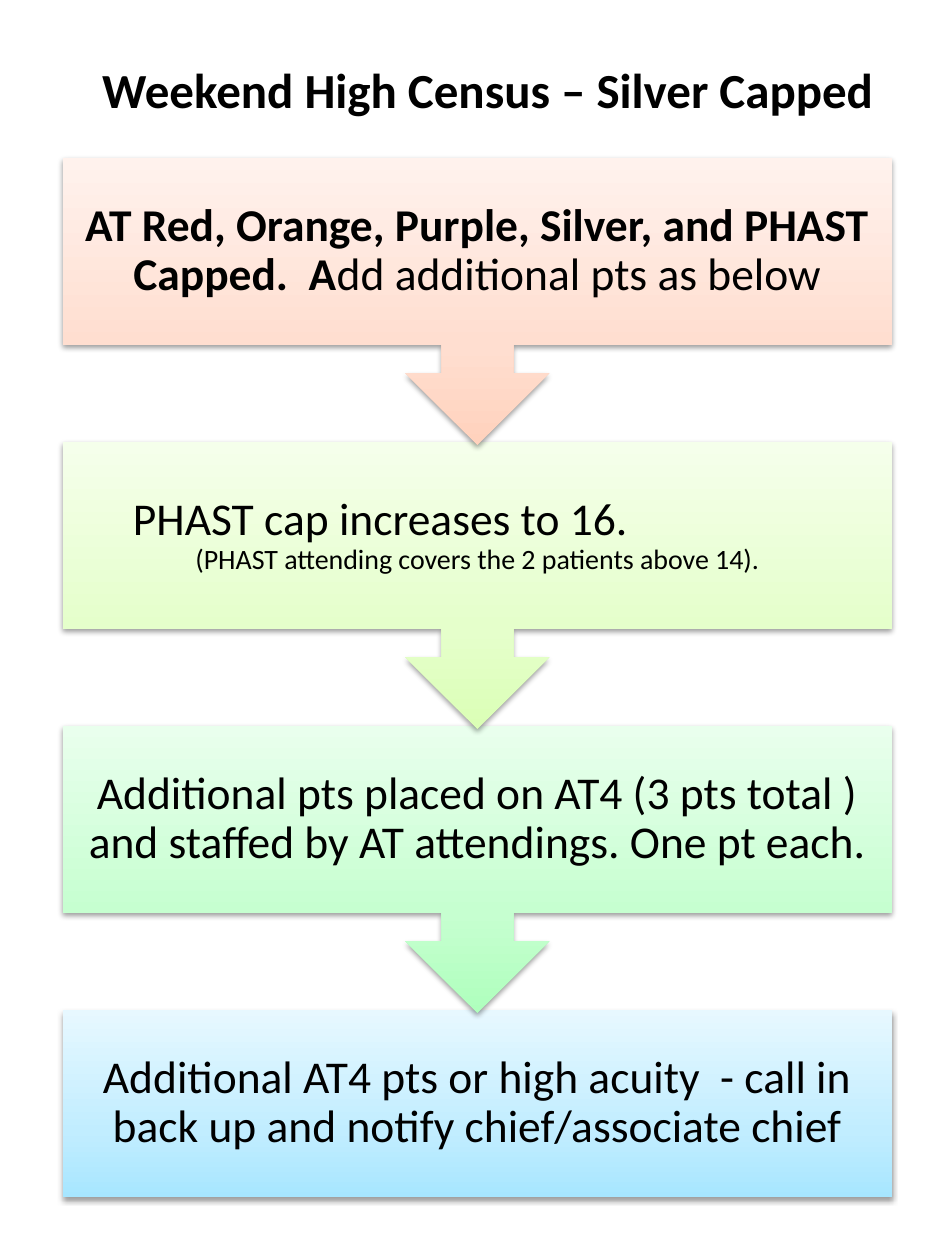
import copy

import lxml.etree
import pptx
import pptx.dml.color
import pptx.enum.shapes
import pptx.enum.text
import pptx.oxml.ns
import pptx.util

RGB = pptx.dml.color.RGBColor
SHAPE = pptx.enum.shapes.MSO_SHAPE
ALIGN = pptx.enum.text.PP_ALIGN
MIDDLE = pptx.enum.text.MSO_ANCHOR.MIDDLE
qn = pptx.oxml.ns.qn

BLACK = RGB(0x00, 0x00, 0x00)
PEACH = (RGB(0xFF, 0xD2, 0xBD), RGB(0xFF, 0xDE, 0xD0), RGB(0xFF, 0xF2, 0xED))
LIME = (RGB(0xDB, 0xFF, 0xB6), RGB(0xE5, 0xFF, 0xCB), RGB(0xF5, 0xFF, 0xEB))
MINT = (RGB(0xAF, 0xFF, 0xBD), RGB(0xC6, 0xFF, 0xD0), RGB(0xE9, 0xFF, 0xED))
SKY = (RGB(0xA7, 0xE6, 0xFF), RGB(0xC1, 0xED, 0xFF), RGB(0xE7, 0xF8, 0xFF))

STEPS = [
    (PEACH, 0, [[("AT Red, Orange, Purple, Silver, and PHAST Capped.  A", 26, True),
                 ("dd additional pts as below", 26, False)]]),
    (LIME, 25, [[("PHAST cap increases to 16.", 26, False)],
                [("(PHAST attending covers the 2 patients above 14).", 16, False)]]),
    (MINT, 25, [[("Additional pts placed on AT4 (3 pts total ) and staffed by "
                  "AT attendings. One pt each.", 26, False)]]),
    (SKY, 25, [[("Additional AT4 pts or high acuity  - call in back up and notify "
                 "chief/associate chief", 26, False)]]),
]


def px(n):
    """Turn pixels into EMU."""
    return pptx.util.Emu(round(n * 914400 / 126))


def style(run, size, bold):
    """Set the font of one run."""
    font = run.font
    font.name, font.size, font.bold = "Calibri", pptx.util.Pt(size), bold
    font.color.rgb = BLACK


def shade(shape, tones):
    """Fill a shape with a three-tone gradient that lightens upward."""
    fill = shape.fill
    fill.gradient()
    fill.gradient_angle = 90
    stops = shape._element.spPr.find(".//" + qn("a:gsLst"))
    stops.insert(1, copy.deepcopy(stops[0]))
    for stop, tone, spot in zip(fill.gradient_stops, tones, (0, 0.35, 1)):
        stop.color.rgb = tone
        stop.position = spot
    shape.line.fill.background()


def drop(shape):
    """Give a shape a soft shadow below it."""
    shape.shadow.inherit = False
    effect = shape._element.spPr.find(qn("a:effectLst"))
    outer = lxml.etree.SubElement(
        effect, qn("a:outerShdw"), blurRad=str(pptx.util.Pt(3.1)),
        dist=str(pptx.util.Pt(1.6)), dir="5400000", rotWithShape="0")
    tint = lxml.etree.SubElement(outer, qn("a:srgbClr"), val=str(BLACK))
    lxml.etree.SubElement(tint, qn("a:alpha"), val="38000")


def write(frame, paras, inset):
    """Write paragraphs of styled runs in the middle of a frame."""
    frame.word_wrap = True
    frame.vertical_anchor = MIDDLE
    frame.margin_left = frame.margin_right = px(inset)
    frame.margin_top = frame.margin_bottom = px(inset)
    for i, runs in enumerate(paras):
        para = frame.add_paragraph() if i else frame.paragraphs[0]
        para.alignment = ALIGN.CENTER
        para.line_spacing = 0.9
        for text, size, bold in runs:
            run = para.add_run()
            run.text = text
            style(run, size, bold)
    if len(paras) > 1:
        lead = frame.paragraphs[0]
        lead.alignment = ALIGN.LEFT
        lead._p.get_or_add_pPr().set("marL", str(px(45)))


def add_title(slide, left, top, width, height):
    """Place the slide title in the given box."""
    title = slide.shapes.title
    title.left, title.top = px(left), px(top)
    title.width, title.height = px(width), px(height)
    frame = title.text_frame
    frame.text = "Weekend High Census – Silver Capped"
    frame.word_wrap = True
    frame.auto_size = pptx.enum.text.MSO_AUTO_SIZE.NONE
    frame.vertical_anchor = MIDDLE
    frame.paragraphs[0].alignment = ALIGN.CENTER
    style(frame.paragraphs[0].runs[0], 28, True)


def add_flow(slide, left, top, width, height):
    """Stack the steps in the given box, each pointing to the next."""
    body, full = 187, 287
    pitch = (height - body) / (len(STEPS) - 1)
    last = len(STEPS) - 1
    for i, (tones, inset, paras) in reversed(list(enumerate(STEPS))):
        kind = SHAPE.RECTANGLE if i == last else SHAPE.DOWN_ARROW_CALLOUT
        tall = body if i == last else full
        step = slide.shapes.add_shape(
            kind, px(left), px(top + i * pitch), px(width), px(tall))
        if i < last:
            step.adjustments[3] = body / full
        shade(step, tones)
        drop(step)
        write(step.text_frame, paras, inset)


def main():
    """Build and save the slide."""
    deck = pptx.Presentation()
    deck.slide_width, deck.slide_height = px(945), px(1260)
    slide = deck.slides.add_slide(deck.slide_layouts[5])
    add_title(slide, 73, 53, 829, 72)
    add_flow(slide, 63, 158, 829, 1039)
    deck.save("out.pptx")


if __name__ == "__main__":
    main()
